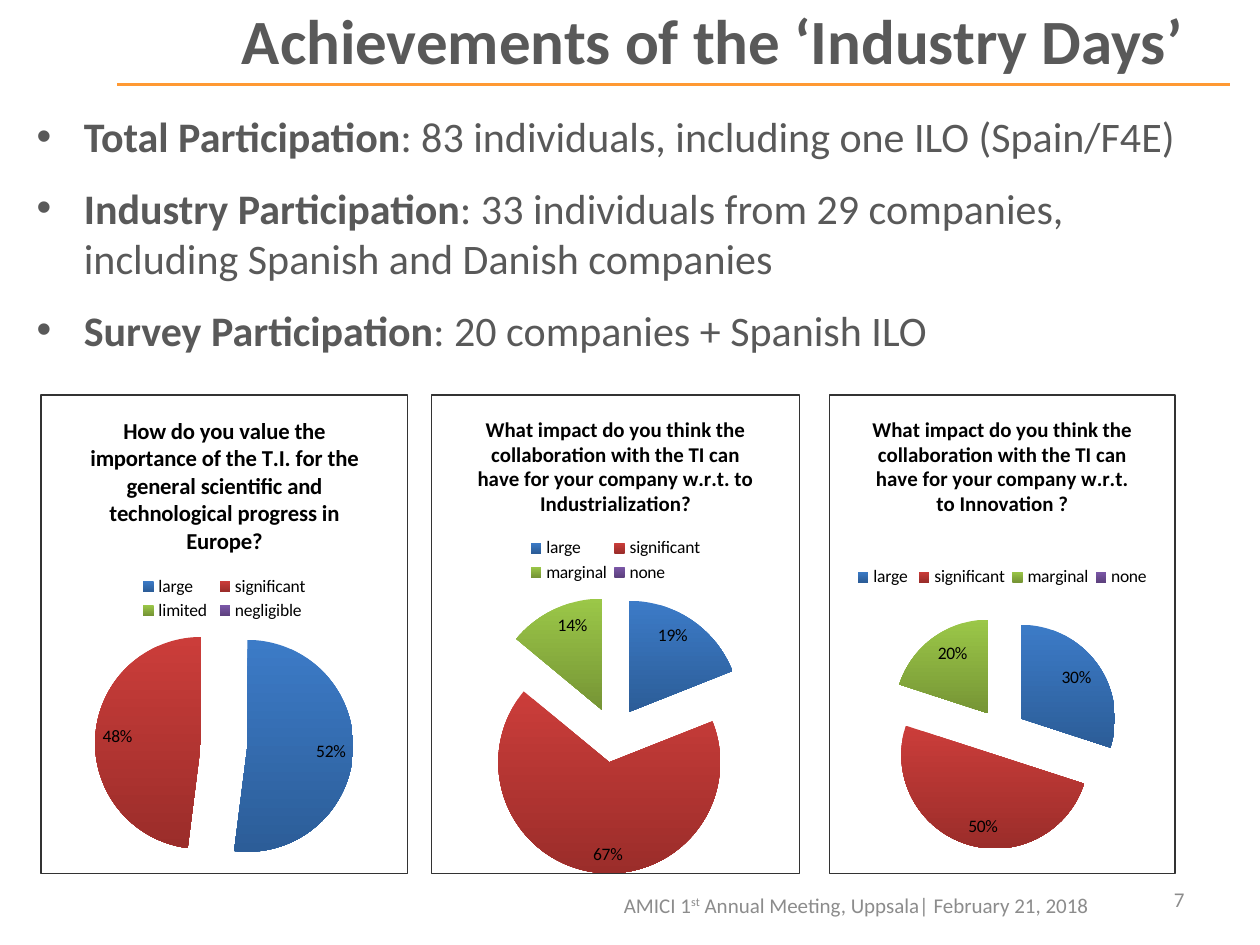
from dataclasses import dataclass

from lxml import etree
from pptx import Presentation
from pptx.chart.data import CategoryChartData
from pptx.dml.color import RGBColor as RGB
from pptx.enum.chart import XL_CHART_TYPE as ChartType
from pptx.enum.chart import XL_LABEL_POSITION as LabelPos
from pptx.enum.chart import XL_LEGEND_POSITION as LegendPos
from pptx.enum.shapes import MSO_CONNECTOR as Connector
from pptx.enum.text import MSO_ANCHOR as Anchor
from pptx.enum.text import MSO_AUTO_SIZE as AutoSize
from pptx.enum.text import PP_ALIGN as Align
from pptx.oxml import parse_xml
from pptx.oxml.ns import nsdecls, qn
from pptx.util import Inches, Pt


@dataclass(frozen=True)
class Theme:
    """Colours and type sizes of the slide."""
    font: str = "Calibri"
    text: str = "595959"
    muted: str = "8C8C8C"
    rule: str = "FF9933"
    border: str = "333333"
    chart_text: str = "000000"
    slices: tuple = (("3C7BC7", "2C5D98"), ("CB3D3A", "9B2D2A"),
                     ("9BC748", "769535"), ("7B57A8", "5D417E"))
    title_size: int = 36
    body_size: int = 24
    footer_size: int = 12
    chart_size: int = 10


THEME = Theme()

ACHIEVEMENTS = [
    ("Total Participation", ": 83 individuals, including one ILO (Spain/F4E)"),
    ("Industry Participation", ": 33 individuals from 29 companies, "
                               "including Spanish and Danish companies"),
    ("Survey Participation", ": 20 companies + Spanish ILO"),
]

IMPACT = "What impact do you think the collaboration with the TI can have for your company w.r.t. "
IMPACT_ANSWERS = ("large ", "significant", "marginal", "none")


@dataclass(frozen=True)
class Question:
    """One survey question with its answers and the layout of its chart."""
    title: str
    title_size: int
    answers: tuple
    percents: tuple
    explosion: int
    legend: tuple
    plot: tuple
    left: float
    width: float


QUESTIONS = [
    Question("How do you value the importance of the T.I. for the general scientific "
             "and technological progress in Europe?", 13,
             ("large", "significant", "limited", "negligible"), (52, 48, 0, 0), 22,
             (0.26, 0.37, 0.48, 0.11), (0, 0.46, 1, 0.54), 0.32, 2.92),
    Question(IMPACT + "to Industrialization?", 12, IMPACT_ANSWERS, (19, 67, 14, 0), 25,
             (0.25, 0.29, 0.5, 0.11), (0, 0.42, 0.99, 0.58), 3.42, 2.93),
    Question(IMPACT + "to Innovation ?", 12, IMPACT_ANSWERS, (30, 50, 20, 0), 25,
             (0.06, 0.35, 0.88, 0.06), (0, 0.46, 1, 0.49), 6.58, 2.75),
]


def style(font, size, color, bold=None):
    """Set face, size, colour and weight of a font."""
    font.name, font.size, font.bold = THEME.font, Pt(size), bold
    font.color.rgb = RGB.from_string(color)


def place(shape, box):
    """Move a shape to a box of left, top, width and height."""
    shape.left, shape.top, shape.width, shape.height = box


def manual_layout(box, inner=False):
    """Return a chart layout element for a box given in fractions."""
    target = '<c:layoutTarget val="inner"/>' if inner else ""
    modes = '<c:xMode val="edge"/><c:yMode val="edge"/>'
    sizes = "".join(f'<c:{key} val="{value}"/>' for key, value in zip("xywh", box))
    return parse_xml(f'<c:layout {nsdecls("c")}><c:manualLayout>{target}{modes}{sizes}'
                     '</c:manualLayout></c:layout>')


def drop_layout(element):
    """Remove the automatic layout of a chart part."""
    for layout in element.findall(qn("c:layout")):
        element.remove(layout)


def add_heading(slide, box, rule_left, rule_right, rule_top):
    """Fill the title and draw the rule below it."""
    rule = slide.shapes.add_connector(Connector.STRAIGHT, rule_left, rule_top,
                                      rule_right, rule_top)
    rule.line.color.rgb = RGB.from_string(THEME.rule)
    rule.line.width = Pt(1.5)
    etree.SubElement(rule._element.spPr, qn("a:effectLst"))
    heading = slide.shapes.title
    place(heading, box)
    frame = heading.text_frame
    frame.text = "Achievements of the ‘Industry Days’"
    frame.vertical_anchor = Anchor.MIDDLE
    frame.auto_size = AutoSize.NONE
    frame.paragraphs[0].alignment = Align.CENTER
    style(frame.paragraphs[0].font, THEME.title_size, THEME.text, True)


def add_achievements(slide, box):
    """Fill the body with the participation list."""
    body = slide.placeholders[1]
    place(body, box)
    frame = body.text_frame
    frame.auto_size = AutoSize.NONE
    for index, (topic, detail) in enumerate(ACHIEVEMENTS):
        item = frame.add_paragraph() if index else frame.paragraphs[0]
        item.space_before, item.space_after = Pt(0), Pt(12)
        style(item.font, THEME.body_size, THEME.text)
        topic_run = item.add_run()
        topic_run.text = topic
        topic_run.font.bold = True
        item.add_run().text = detail


def style_slices(series, question):
    """Explode and colour the slices and label those above zero."""
    series._element.find(qn("c:tx")).addnext(
        parse_xml(f'<c:explosion {nsdecls("c")} val="{question.explosion}"/>'))
    for index, colors in enumerate(THEME.slices):
        fill = series.points[index].format.fill
        fill.gradient()
        fill.gradient_angle = 270
        for stop, color in zip(fill.gradient_stops, colors):
            stop.color.rgb = RGB.from_string(color)
    labels = series.data_labels
    labels.show_percentage, labels.show_value = True, False
    labels.number_format, labels.number_format_is_linked = "0%", False
    labels.position = LabelPos.INSIDE_END
    style(labels.font, THEME.chart_size, THEME.chart_text)
    empty = [index for index, percent in enumerate(question.percents) if not percent]
    for position, index in enumerate(empty):
        labels._element.insert(position, parse_xml(
            f'<c:dLbl {nsdecls("c")}><c:idx val="{index}"/><c:delete val="1"/></c:dLbl>'))


def add_survey_pie(slide, box, question):
    """Add the framed pie chart of one survey question."""
    data = CategoryChartData()
    data.categories = question.answers
    data.add_series("Series 1", question.percents)
    chart = slide.shapes.add_chart(ChartType.PIE, *box, data).chart
    style(chart.font, THEME.chart_size, THEME.chart_text)
    chart._chartSpace.find(qn("c:txPr")).addprevious(parse_xml(
        f'<c:spPr {nsdecls("c", "a")}><a:noFill/><a:ln w="{Pt(0.75)}"><a:solidFill>'
        f'<a:srgbClr val="{THEME.border}"/></a:solidFill></a:ln></c:spPr>'))
    chart.has_title = True
    chart.chart_title.include_in_layout = False
    caption = chart.chart_title.text_frame
    caption.text = question.title
    style(caption.paragraphs[0].font, question.title_size, THEME.chart_text, True)
    chart.has_legend = True
    chart.legend.position = LegendPos.TOP
    chart.legend.include_in_layout = False
    legend = chart.legend._element
    drop_layout(legend)
    legend.find(qn("c:legendPos")).addnext(manual_layout(question.legend))
    plot_area = chart._chartSpace.chart.plotArea
    drop_layout(plot_area)
    plot_area.insert(0, manual_layout(question.plot, inner=True))
    pie = chart.plots[0]
    pie.vary_by_categories = True
    style_slices(pie.series[0], question)


def add_footer_text(slide, box, parts):
    """Add right-aligned footer text from (text, raised) parts."""
    frame = slide.shapes.add_textbox(*box).text_frame
    frame.word_wrap = True
    frame.vertical_anchor = Anchor.MIDDLE
    line = frame.paragraphs[0]
    line.alignment = Align.RIGHT
    style(line.font, THEME.footer_size, THEME.muted)
    for text, raised in parts:
        run = line.add_run()
        run.text = text
        if raised:
            run.font._element.set("baseline", "30000")


def inches(*lengths):
    """Turn plain numbers into slide lengths."""
    return [Inches(length) for length in lengths]


def main():
    """Build and save the slide."""
    deck = Presentation()
    deck.slide_width, deck.slide_height = inches(10, 7.5)
    slide = deck.slides.add_slide(deck.slide_layouts[1])
    add_heading(slide, inches(1.67, 0.05, 7.97, 0.53), *inches(0.93, 9.76, 0.67))
    add_achievements(slide, inches(0.19, 0.83, 9.38, 2.05))
    for question in QUESTIONS:
        add_survey_pie(slide, inches(question.left, 3.13, question.width, 3.81), question)
    add_footer_text(slide, inches(7.17, 6.94, 2.33, 0.4), [("7", False)])
    add_footer_text(slide, inches(2.24, 6.98, 6.5, 0.4),
                    [("AMICI 1", False), ("st", True),
                     (" Annual Meeting, Uppsala| February 21, 2018", False)])
    deck.save("out.pptx")


if __name__ == "__main__":
    main()
